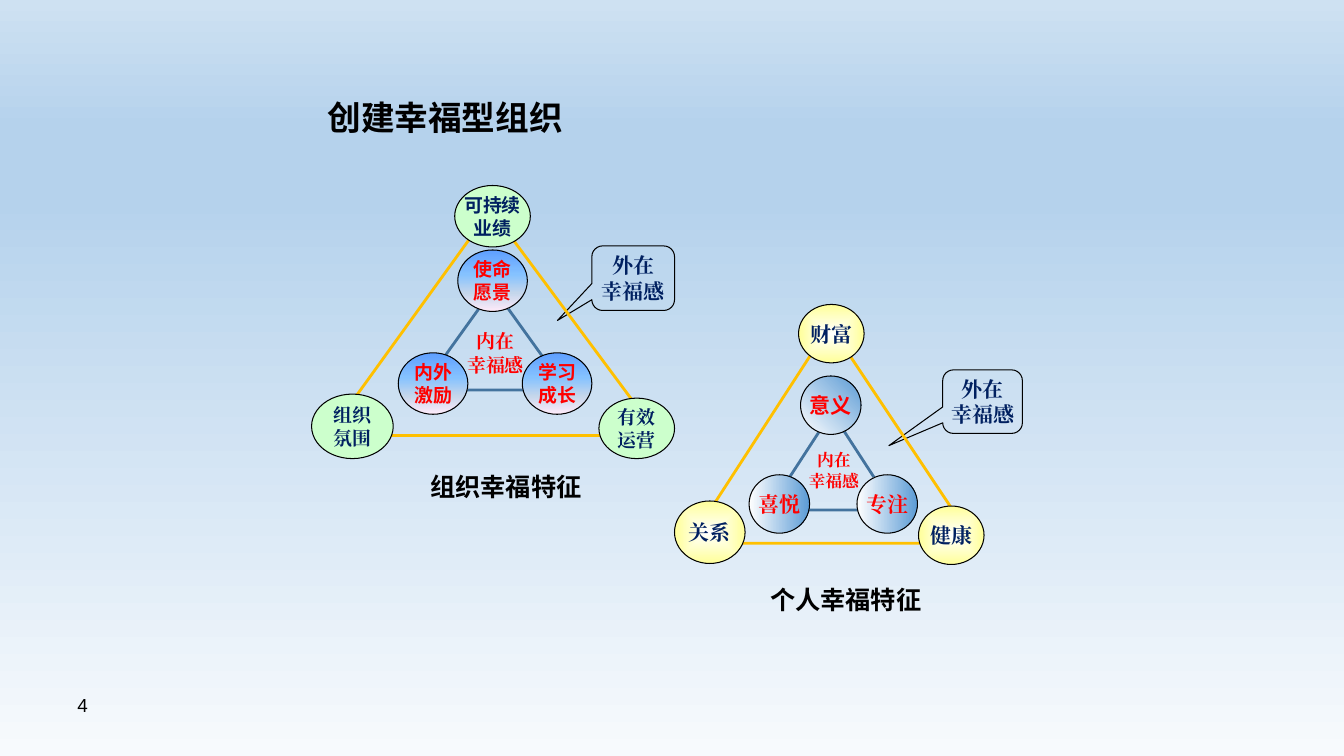
from lxml.etree import SubElement
from pptx import Presentation
from pptx.dml.color import RGBColor
from pptx.enum.shapes import MSO_SHAPE
from pptx.enum.text import MSO_ANCHOR, PP_ALIGN
from pptx.oxml.ns import qn
from pptx.util import Inches, Pt

prs = Presentation()
prs.slide_width, prs.slide_height = Inches(13.33), Inches(7.5)
COL, ROW = prs.slide_width // 1333, prs.slide_height // 750
s = prs.slides.add_slide(prs.slide_layouts[6])

NOTO, TIMES = "Noto Sans CJK SC", "Times New Roman"
BLACK, RED, NAVY = "000000", "FF0000", "002060"
STEEL, AMBER = "43739E", "FFC000"


def paint(fill, element, stops, angle):
    """Fill with a gradient of (percent, colour) stops; no angle means from the centre."""
    fill.gradient()
    grad = element.find(".//" + qn("a:gradFill"))
    for child in list(grad):
        grad.remove(child)
    gs_list = SubElement(grad, qn("a:gsLst"))
    for percent, colour in stops:
        gs = SubElement(gs_list, qn("a:gs"), pos=str(percent * 1000))
        SubElement(gs, qn("a:srgbClr"), val=colour)
    if angle is None:
        centre = SubElement(grad, qn("a:path"), path="shape")
        SubElement(centre, qn("a:fillToRect"), dict.fromkeys("ltrb", "50000"))
    else:
        SubElement(grad, qn("a:lin"), ang=str(angle * 60000), scaled="0")


def draw(kind, box, text="", size=13.5, font=NOTO, colour=BLACK, fill=None, angle=None,
         line=BLACK, weight=0.75, adj=(), wrap=False, before=0, align=PP_ALIGN.CENTER):
    """Add a preset shape, or a text box when kind is None; box is in grid columns and rows."""
    x, y, w, h = box
    place = x * COL, y * ROW, w * COL, h * ROW
    if kind is None:
        sp = s.shapes.add_textbox(*place)
    else:
        sp = s.shapes.add_shape(kind, *place)
        sp.shadow.inherit = False
        sp.line.color.rgb = RGBColor.from_string(line)
        sp.line.width = Pt(weight)
        for i, value in enumerate(adj):
            sp.adjustments[i] = value
        if fill is None:
            sp.fill.background()
        elif isinstance(fill, str):
            sp.fill.solid()
            sp.fill.fore_color.rgb = RGBColor.from_string(fill)
        else:
            paint(sp.fill, sp._element, fill, angle)
    if not text:
        return
    tf = sp.text_frame
    tf.word_wrap = wrap
    tf.vertical_anchor = MSO_ANCHOR.TOP if kind is None else MSO_ANCHOR.MIDDLE
    for i, words in enumerate(text.split("\n")):
        p = tf.add_paragraph() if i else tf.paragraphs[0]
        p.alignment, p.space_before = align, Pt(before)
        r = p.add_run()
        r.text = words
        for name, value in {"size": Pt(size), "name": font, "bold": words != "4"}.items():
            setattr(r.font, name, value)
        r.font.color.rgb = RGBColor.from_string(colour)
        SubElement(r._r.rPr, qn("a:ea"), typeface=font)


paint(s.background.fill, s._element,
      [(0, "F7FAFD"), (74, "B5D2EC"), (83, "B5D2EC"), (100, "CEE1F2")], 270)
draw(None, (67, 683, 311, 52), "4", font="Arial", wrap=True, align=PP_ALIGN.LEFT)
draw(None, (315, 91, 254, 50), "创建幸福型组织", 24, align=PP_ALIGN.LEFT)

SKY = [(0, "5E9EFF"), (40, "85C2FF"), (70, "C4D6EB"), (100, "FFEBFA")]
BLUE = [(0, "FFFFFF"), (100, "5B9BD5")]
YELLOW = [(0, "FFFFFF"), (100, "FFFF99")]

organisation = {
    "inner_triangle": (417, 286, 145, 101), "inner_size": (69, 61), "inner_fill": SKY,
    "inner": [(454, 248, "使命\n愿景", NOTO, 90), (518, 350, "学习\n成长", NOTO, 90),
              (395, 350, "内外\n激励", NOTO, 90)],
    "core": (443, 322, 97, 57), "core_pt": 13.5, "node_pt": 13.5,
    "callout": (587, 244, 82, 64), "tip": (-0.917, 0.656, 0.167),
    "outer_triangle": (325, 208, 328, 224), "outer_fill": "CCFFCC",
    "outer": [((451, 184, 75, 61), "可持续\n业绩", NOTO), ((309, 391, 81, 64), "组织\n氛围", TIMES),
              ((594, 395, 75, 60), "有效\n运营", TIMES)],
    "caption": (417, 463, 171, 40), "name": "组织幸福特征",
}
person = {
    "inner_triangle": (762, 409, 126, 97), "inner_size": (60, 58), "inner_fill": BLUE,
    "inner": [(794, 373, "意义", NOTO, 315), (850, 471, "专注", TIMES, 0),
              (743, 471, "喜悦", TIMES, 0)],
    "core": (785, 441, 84, 51), "core_pt": 12, "node_pt": 15,
    "callout": (935, 367, 79, 63), "tip": (-1.176, 0.693, 0.167),
    "outer_triangle": (683, 323, 284, 216), "outer_fill": YELLOW,
    "outer": [((792, 302, 65, 58), "财富", TIMES), ((669, 497, 70, 62), "关系", TIMES),
              ((911, 502, 65, 58), "健康", TIMES)],
    "caption": (754, 575, 171, 40), "name": "个人幸福特征",
}

for fig in (organisation, person):
    pt = fig["node_pt"]
    draw(MSO_SHAPE.ISOSCELES_TRIANGLE, fig["inner_triangle"], line=STEEL, weight=2)
    for x, y, text, font, angle in fig["inner"]:
        draw(MSO_SHAPE.OVAL, (x, y, *fig["inner_size"]), text, pt, font, RED,
             fig["inner_fill"], angle)
    draw(None, fig["core"], "内在\n幸福感", fig["core_pt"], TIMES, RED, wrap=True,
         before=fig["core_pt"] * 0.05)
    draw(MSO_SHAPE.ROUNDED_RECTANGULAR_CALLOUT, fig["callout"], "外在\n幸福感", 15, TIMES,
         NAVY, adj=fig["tip"])
    draw(MSO_SHAPE.ISOSCELES_TRIANGLE, fig["outer_triangle"], line=AMBER, weight=2, adj=[0.493])
    for box, text, font in fig["outer"]:
        draw(MSO_SHAPE.OVAL, box, text, pt, font, NAVY, fig["outer_fill"])
    draw(None, fig["caption"], fig["name"], 18, align=PP_ALIGN.LEFT)

prs.save("out.pptx")
